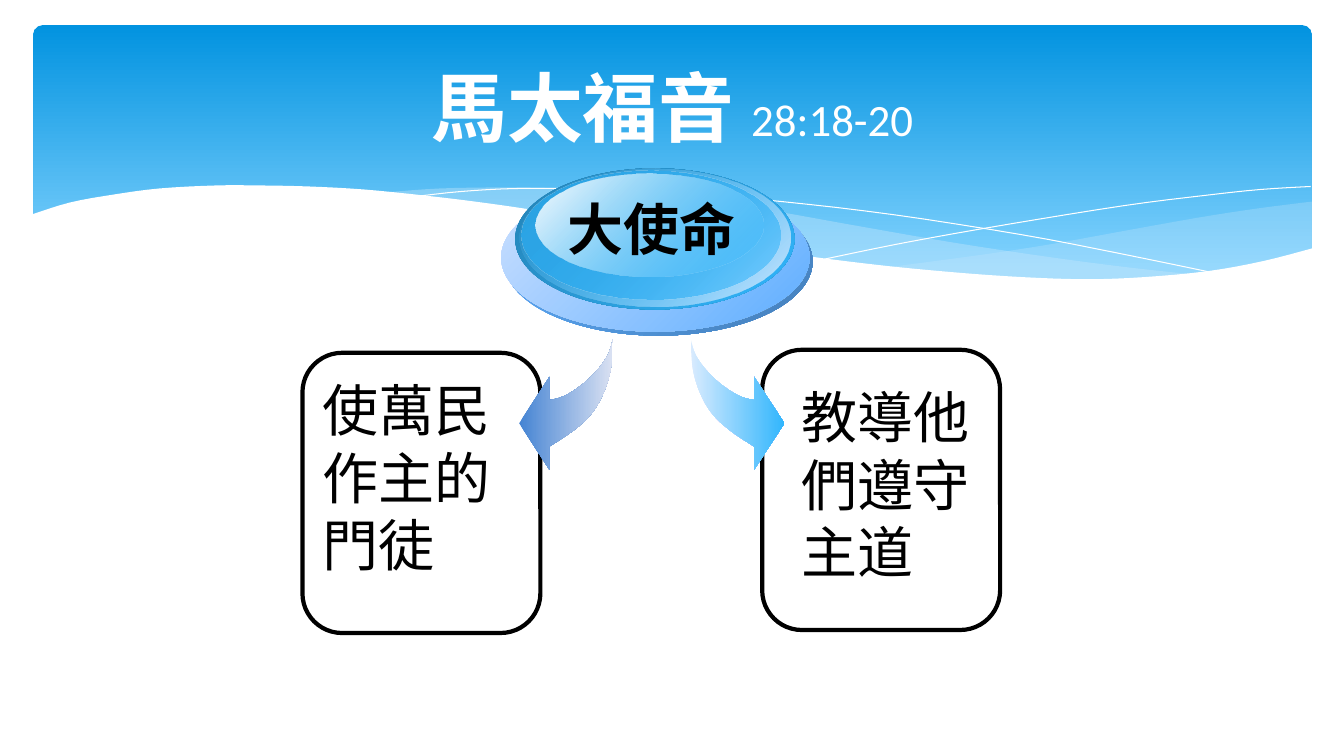
from lxml import etree
from pptx import Presentation
from pptx.dml.color import RGBColor
from pptx.enum.shapes import MSO_SHAPE
from pptx.enum.text import MSO_ANCHOR, MSO_AUTO_SIZE, PP_ALIGN
from pptx.oxml.ns import qn
from pptx.util import Inches, Pt

ELLIPSE, ROUNDED = MSO_SHAPE.OVAL, MSO_SHAPE.ROUNDED_RECTANGLE
CENTER, MIDDLE = PP_ALIGN.CENTER, MSO_ANCHOR.MIDDLE
FIT_TEXT = MSO_AUTO_SIZE.SHAPE_TO_FIT_TEXT
BLACK, WHITE, SKY, PALE = "000000", "FFFFFF", "31B6FD", "C6E7FC"

# Wave curves as (x, y) knots in inches from the corner of the backdrop
RIGHT_SWELL_TOP = [(13.01, 2), (12.46, 2.07), (11.88, 2.16), (11.1, 2.3),
                   (10.38, 2.43), (9.72, 2.53), (8.82, 2.65)]
RIGHT_SWELL_BASE = [(8.82, 2.65), (9.4, 2.71), (9.93, 2.75), (10.41, 2.77),
                    (10.85, 2.78), (11.38, 2.76), (11.86, 2.72),
                    (12.28, 2.65), (12.66, 2.57), (13.01, 2.47)]
LONG_SWELL_TOP = [(11.9, 2.73), (11.16, 2.65), (10.33, 2.54), (9.41, 2.4),
                  (8.38, 2.22), (7.59, 2.08), (6.86, 1.98), (6.19, 1.91),
                  (5.6, 1.87), (5.06, 1.86), (4.37, 1.87), (3.82, 1.91)]
LONG_SWELL_BASE = [(3.82, 1.91), (4.56, 1.99), (5.39, 2.11), (5.99, 2.22),
                   (7.06, 2.4), (8.02, 2.55), (8.87, 2.66), (9.63, 2.74),
                   (10.3, 2.78), (10.76, 2.79), (11.3, 2.78), (11.9, 2.73)]
FALLING_LINE = [(4.12, 1.95), (4.58, 1.9), (5.16, 1.87), (6, 1.88),
                (6.8, 1.92), (7.75, 2), (8.86, 2.13), (10.14, 2.33),
                (11.08, 2.51), (12.1, 2.72)]
RISING_LINE = [(8.18, 2.57), (8.96, 2.41), (9.97, 2.23), (11.15, 2.04),
               (11.94, 1.94), (12.5, 1.88), (13, 1.85)]
WHITE_WAVE = [(13.03, 2.46), (12.53, 2.59), (11.98, 2.69), (11.34, 2.75),
              (10.78, 2.77), (10.15, 2.75), (9.44, 2.7), (8.63, 2.62),
              (7.72, 2.5), (6.71, 2.33), (5.58, 2.13), (4.86, 2.02),
              (4.21, 1.94), (3.61, 1.88), (3.06, 1.85), (2.58, 1.84),
              (2.14, 1.84), (1.58, 1.87), (1.13, 1.93), (0.69, 2.01),
              (0.31, 2.13)]

# Arrow curves as offsets from the corner of the arrow's box
ARROW_OUTER = [(0.93, 0), (0.91, 0.29), (0.84, 0.53), (0.72, 0.74),
               (0.54, 0.91), (0.3, 1.07)]
ARROW_HEAD = [(0.3, 1.3), (0, 0.84), (0.3, 0.38)]
ARROW_INNER = [(0.3, 0.61), (0.42, 0.58), (0.55, 0.51), (0.69, 0.4),
               (0.81, 0.27), (0.89, 0.14), (0.93, 0)]

# Emblem layers: offset x, y, width, height, two colours, two opacities
EMBLEM_LAYERS = [
    (0.03, 0.19, 3.06, 1.47, ("5EAEFF", "457FBA"), (100, 100)),
    (0, 0.15, 3.06, 1.47, ("CCE0FF", "5EAEFF"), (100, 100)),
    (0.14, 0, 2.77, 1.4, ("2382B5", SKY), (100, 100)),
    (0.18, 0, 2.69, 1.37, (SKY, "D5E9FE"), (0, 100)),
    (0.2, 0.02, 2.57, 1.28, ("2CA4E5", SKY), (100, 48)),
    (0.34, 0.05, 2.26, 1.02, (WHITE, SKY), (100, 38)),
]


def paint(fill, *colours, angle=0, end=1):
    """One colour gives a solid fill, two a gradient turned clockwise."""
    if len(colours) == 1:
        fill.solid()
        fill.fore_color.rgb = RGBColor.from_string(colours[0])
        return
    fill.gradient()
    fill.gradient_angle = -angle % 360
    for stop, colour, position in zip(fill.gradient_stops, colours, (0, end)):
        stop.color.rgb = RGBColor.from_string(colour)
        stop.position = position


def fade(shape, *opacities):
    colours = shape._element.spPr.iter(qn("a:srgbClr"))
    for colour, opacity in zip(list(colours), opacities):
        if opacity < 100:
            etree.SubElement(colour, qn("a:alpha")).set("val", str(opacity * 1000))


def add_preset(slide, kind, box):
    shape = slide.shapes.add_shape(kind, *map(Inches, box))
    shape.shadow.inherit = False
    shape.line.fill.background()
    return shape


def smooth(knots, steps=4):
    """Points of a Catmull-Rom curve through the knots."""
    padded = [knots[0], *knots, knots[-1]]
    points = [knots[0]]
    for a, b, c, d in zip(padded, padded[1:], padded[2:], padded[3:]):
        for step in range(1, steps + 1):
            t = step / steps
            points.append(tuple(
                q + t * (r - p) / 2 + t * t * (2 * p - 5 * q + 4 * r - s) / 2
                + t ** 3 * (3 * q - p - 3 * r + s) / 2
                for p, q, r, s in zip(a, b, c, d)))
    return points


def add_outline(slide, origin, points, close=True):
    left, top = origin
    corners = [(Inches(left + x), Inches(top + y)) for x, y in points]
    builder = slide.shapes.build_freeform(*corners[0])
    builder.add_line_segments(corners[1:], close=close)
    shape = builder.convert_to_shape()
    shape.shadow.inherit = False
    shape.line.fill.background()
    return shape


def style_run(run, size, latin, east_asian, colour, bold=False):
    run.font.size, run.font.name, run.font.bold = Pt(size), latin, bold
    paint(run.font.fill, colour)
    latin_font = run._r.rPr.find(qn("a:latin"))
    ea_font = etree.Element(qn("a:ea"), typeface=east_asian)
    latin_font.addnext(ea_font)


def add_label(slide, box, text, bold=False, wrap=True):
    frame = slide.shapes.add_textbox(*map(Inches, box)).text_frame
    frame.word_wrap, frame.auto_size = wrap, FIT_TEXT
    frame.text = text
    paragraph = frame.paragraphs[0]
    style_run(paragraph.runs[0], 40, "Arial", "Calibri", BLACK, bold)
    return paragraph


def add_backdrop(slide, box):
    left, top, width, _ = box
    # Blue panel
    panel = add_preset(slide, ROUNDED, (left + 0.33, top + 0.25, width - 0.65, 2.7))
    panel.adjustments[0] = 0.034
    paint(panel.fill, "0293E0", "83D3FE", angle=90, end=0.9)
    # Translucent swells
    for crest, base, opacity in ((RIGHT_SWELL_TOP, RIGHT_SWELL_BASE, 29),
                                 (LONG_SWELL_TOP, LONG_SWELL_BASE, 40)):
        swell = add_outline(slide, (left, top), smooth(crest) + smooth(base))
        paint(swell.fill, PALE)
        fade(swell, opacity)
    # Hairlines
    for knots in (FALLING_LINE, RISING_LINE):
        hairline = add_outline(slide, (left, top), smooth(knots), close=False)
        hairline.fill.background()
        paint(hairline.line.fill, WHITE)
        hairline.line.width = Pt(0)
    # White wave over the panel's foot
    wave = add_outline(slide, (left, top),
                       smooth(WHITE_WAVE) + [(0.31, 3.29), (13.03, 3.29)])
    paint(wave.fill, WHITE)


def add_title(slide, box):
    title = slide.shapes.title
    title.left, title.top, title.width, title.height = map(Inches, box)
    slide.shapes._spTree.append(title._element)  # in front of the backdrop
    title.text_frame.vertical_anchor = MIDDLE
    heading = title.text_frame.paragraphs[0]
    heading.text = "馬太福音 "
    heading.alignment = CENTER
    style_run(heading.runs[0], 54, "Noto Sans CJK TC", "Noto Sans CJK TC", WHITE, True)
    verses = heading.add_run()
    verses.text = "28:18-20"
    style_run(verses, 32, "Calibri", "Calibri", WHITE)


def add_card(slide, box, inset, text_width, text):
    card = add_preset(slide, ROUNDED, box)
    card.fill.background()
    paint(card.line.fill, BLACK)
    card.line.width = Pt(3)
    add_label(slide, (box[0] + inset[0], box[1] + inset[1], text_width, 2.12), text)


def add_arrow(slide, box, colours, mirrored=False):
    left, top, width, _ = box
    points = smooth(ARROW_OUTER) + ARROW_HEAD + smooth(ARROW_INNER)
    if mirrored:
        points = [(width - x, y) for x, y in points]
    paint(add_outline(slide, (left, top), points).fill, *colours)


def add_emblem(slide, box):
    left, top, _, _ = box
    for x, y, width, height, colours, opacities in EMBLEM_LAYERS:
        layer = add_preset(slide, ELLIPSE, (left + x, top + y, width, height))
        paint(layer.fill, *colours, angle=45)
        fade(layer, *opacities)
    mission = add_label(slide, (left + 0.55, top + 0.21, 1.89, 0.77), "大使命",
                        bold=True, wrap=False)
    mission.alignment = CENTER


def main():
    deck = Presentation()
    deck.slide_width, deck.slide_height = Inches(13.33), Inches(7.5)
    slide = deck.slides.add_slide(deck.slide_layouts[5])
    add_backdrop(slide, (0, 0, 13.33, 7.5))
    add_title(slide, (0.67, 0.37, 12, 1.37))
    add_card(slide, (7.56, 3.47, 2.36, 2.78), (0.29, 0.28), 2.23, "教導他們遵守主道")
    add_card(slide, (3, 3.5, 2.36, 2.78), (0.1, 0.18), 2.1, "使萬民作主的門徒")
    add_arrow(slide, (5.15, 3.36, 0.93, 1.3), ("4584D3", "DAE1F2"))
    add_arrow(slide, (6.85, 3.36, 0.93, 1.3), ("D9EBFE", SKY), mirrored=True)
    add_emblem(slide, (4.97, 1.67, 3.09, 1.66))
    deck.save("out.pptx")


if __name__ == "__main__":
    main()
